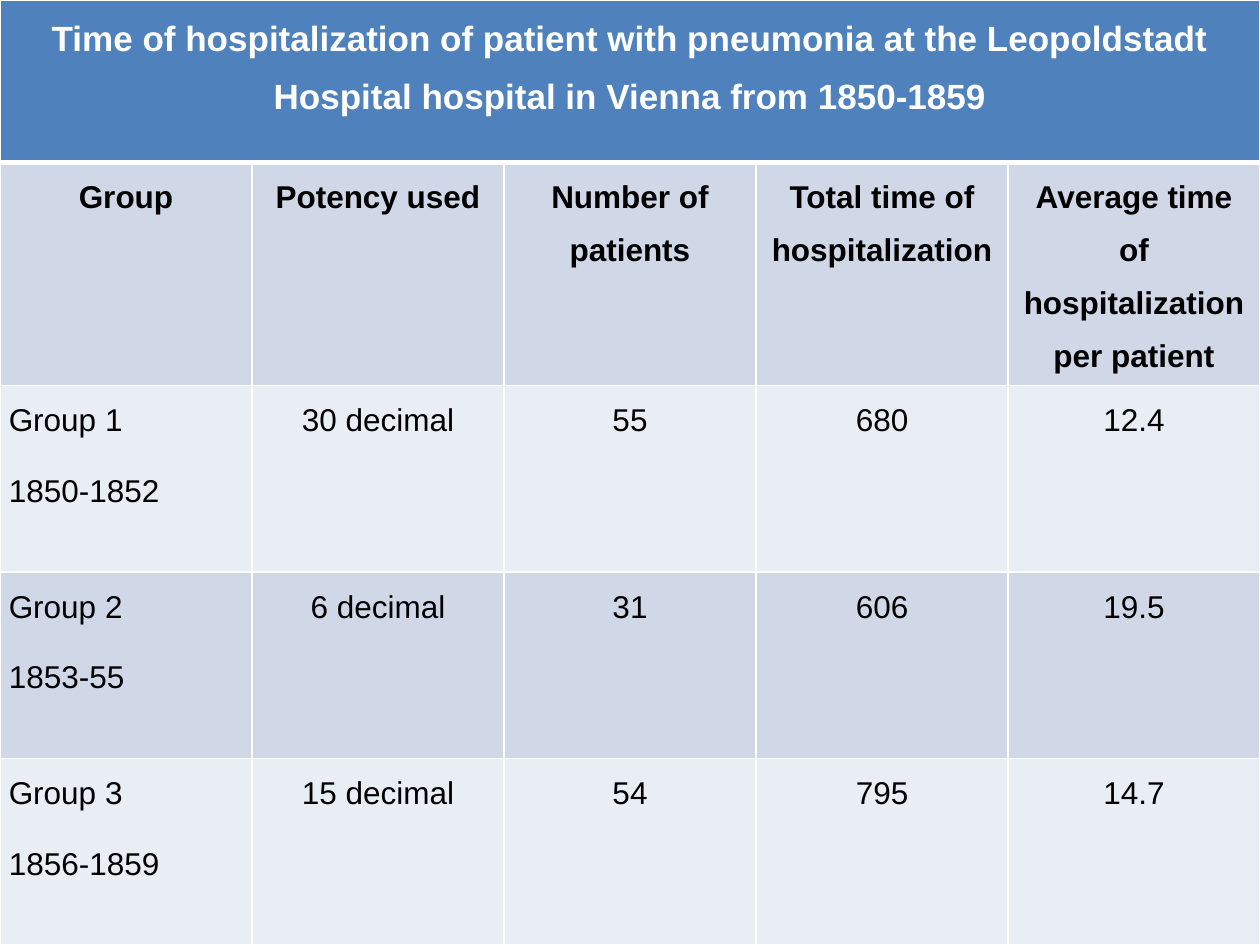
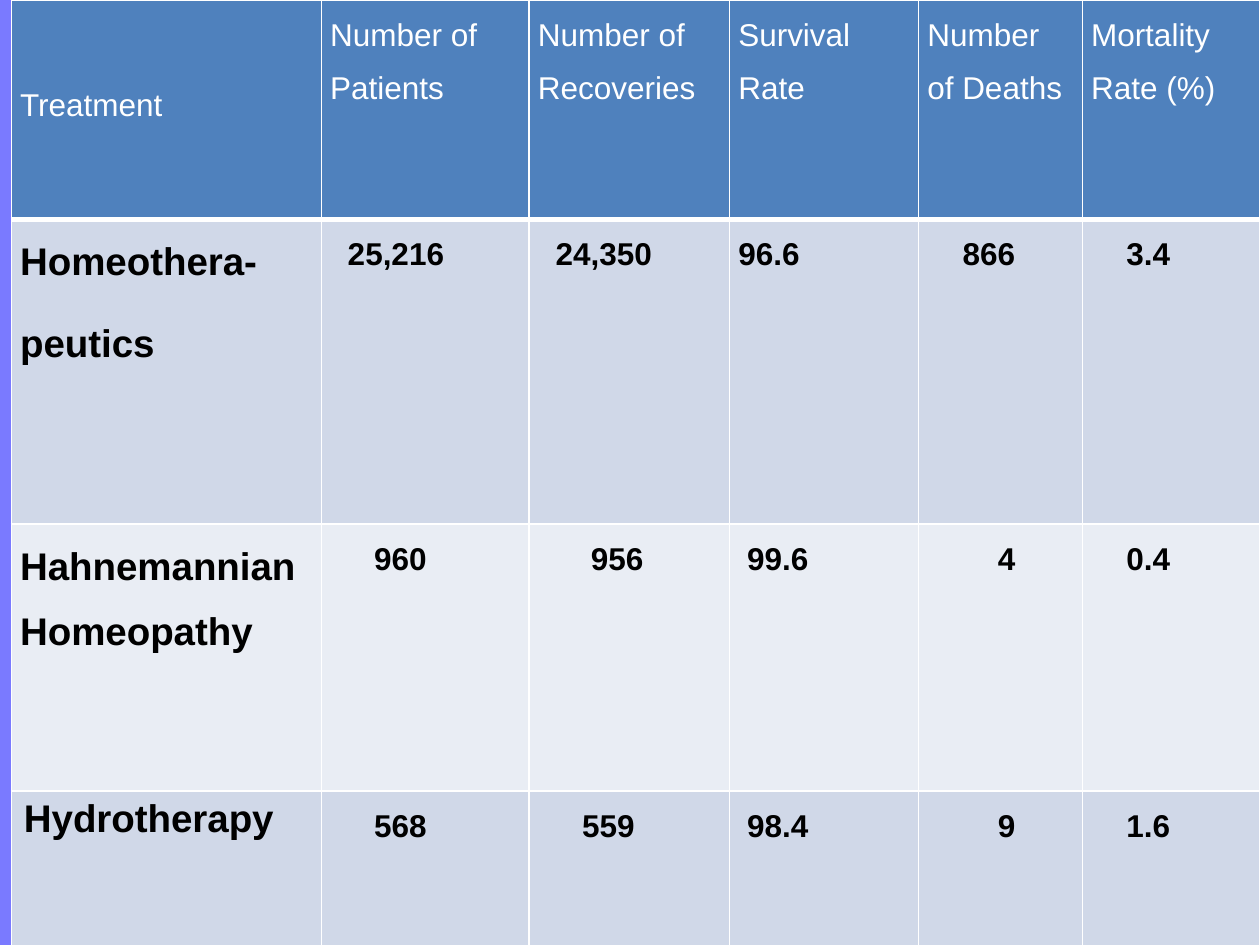
from dataclasses import dataclass, replace

from lxml.etree import SubElement
from pptx import Presentation
from pptx.dml.color import RGBColor as Color
from pptx.enum.text import PP_ALIGN as Align
from pptx.oxml.ns import qn
from pptx.util import Inches, Pt


@dataclass(frozen=True)
class Theme:
    font: str = "Arial"
    backdrop: str = "7A7AFF"
    header: str = "4F81BD"
    bands: tuple[str, str] = ("D0D8E8", "E9EDF4")
    light: str = "FFFFFF"
    dark: str = "000000"
    body_size: int = 18
    title_size: int = 20
    treatment_size: int = 22
    thin: int = 1
    thick: int = 3
    inset: float = 0.07


THEME = Theme()


@dataclass(frozen=True)
class Entry:
    """One table cell; each line of text is a paragraph."""
    text: str
    indent: float = 0
    drop: float = 0
    size: int = THEME.body_size
    color: str = THEME.dark
    bold: bool = False
    align: Align = Align.LEFT
    spacing: float = 1.5
    after: int = 10


@dataclass(frozen=True)
class Grid:
    left: float
    columns: list[float]
    heights: list[float]
    rows: list[list[Entry]]


def write_text(frame, text: str, *, size: int, color: str, bold: bool,
               align: Align, spacing: float, after: int) -> None:
    for number, line in enumerate(text.split("\n")):
        para = frame.add_paragraph() if number else frame.paragraphs[0]
        para.alignment, para.line_spacing = align, spacing
        para.space_before, para.space_after = Pt(0), Pt(after)
        span = para.add_run()
        span.text = line
        span.font.name, span.font.size = THEME.font, Pt(size)
        span.font.bold = bold
        span.font.color.rgb = Color.from_string(color)


def draw_borders(cell, top: int, bottom: int) -> None:
    properties = cell._tc.get_or_add_tcPr()
    sides = {"L": THEME.thin, "R": THEME.thin, "T": top, "B": bottom}
    for position, (side, width) in enumerate(sides.items()):
        line = SubElement(properties, qn(f"a:ln{side}"), w=str(Pt(width)))
        fill = SubElement(line, qn("a:solidFill"))
        SubElement(fill, qn("a:srgbClr"), val=THEME.light)
        properties.insert(position, line)  # borders come before the fill


def style_cell(cell, row: int) -> None:
    cell.fill.solid()
    band = THEME.bands[(row - 1) % 2] if row else THEME.header
    cell.fill.fore_color.rgb = Color.from_string(band)
    draw_borders(cell, top=THEME.thick if row == 1 else THEME.thin,
                 bottom=THEME.thin if row else THEME.thick)


def fill_cell(cell, entry: Entry) -> None:
    cell.margin_left = Inches(THEME.inset + entry.indent)
    cell.margin_right = Inches(THEME.inset)
    cell.margin_top, cell.margin_bottom = Inches(entry.drop), Inches(0)
    write_text(cell.text_frame, entry.text, size=entry.size, color=entry.color,
               bold=entry.bold, align=entry.align, spacing=entry.spacing,
               after=entry.after)


def add_table_page(deck, grid: Grid) -> None:
    page = deck.slides.add_slide(deck.slide_layouts[6])
    page.background.fill.solid()
    page.background.fill.fore_color.rgb = Color.from_string(THEME.backdrop)
    table = page.shapes.add_table(
        len(grid.heights), len(grid.columns), Inches(grid.left), Inches(0),
        Inches(sum(grid.columns)), Inches(sum(grid.heights))).table
    table.first_row = table.horz_banding = False
    for column, width in zip(table.columns, grid.columns):
        column.width = Inches(width)
    for number, (row, height) in enumerate(zip(table.rows, grid.heights)):
        row.height = Inches(height)
        for cell in row.cells:
            style_cell(cell, number)
        entries = grid.rows[number]
        if len(entries) == 1:  # a lone entry spans the whole row
            row.cells[0].merge(row.cells[len(grid.columns) - 1])
        for cell, entry in zip(row.cells, entries):
            fill_cell(cell, entry)


def hospitalization_grid() -> Grid:
    title = Entry("Time of hospitalization of patient with pneumonia at the "
                  "Leopoldstadt Hospital hospital in Vienna from 1850-1859",
                  size=THEME.title_size, color=THEME.light, bold=True,
                  align=Align.CENTER)
    headings = ["Group", "Potency used", "Number of patients",
                "Total time of hospitalization",
                "Average time of hospitalization per patient"]
    groups = [
        ("Group 1\n1850-1852", "30 decimal", "55", "680", "12.4"),
        ("Group 2\n1853-55", "6 decimal", "31", "606", "19.5"),
        ("Group 3\n1856-1859", "15 decimal", "54", "795", "14.7"),
    ]
    rows = [[title], [Entry(text, bold=True, align=Align.CENTER) for text in headings]]
    for name, *values in groups:
        rows.append([Entry(name)] + [Entry(value, align=Align.CENTER) for value in values])
    return Grid(0, [2] * 5, [1.29, 1.77] + [1.48] * 3, rows)


def treatment_grid() -> Grid:
    headings = ["Treatment", "Number of Patients", "Number of Recoveries",
                "Survival Rate", "Number of Deaths", "Mortality Rate (%)"]
    header = [Entry(text, color=THEME.light) for text in headings]
    header[0] = replace(header[0], drop=0.56)
    name = Entry("", size=THEME.treatment_size, bold=True)
    # Each value is paired with its indent in steps
    step = 0.07
    treatments = [
        (replace(name, text="Homeothera-\npeutics"),
         [("25,216", 2), ("24,350", 2), ("96.6", 0), ("866", 4), ("3.4", 4)]),
        (replace(name, text="Hahnemannian\nHomeopathy", after=0),
         [("960", 5), ("956", 6), ("99.6", 1), ("4", 8), ("0.4", 4)]),
        (replace(name, text="Hydrotherapy", indent=0.03, drop=0.05, spacing=1.0, after=0),
         [("568", 5), ("559", 5), ("98.4", 1), ("9", 8), ("1.6", 4)]),
    ]
    rows = [header]
    for treatment, values in treatments:
        rows.append([treatment] + [Entry(value, indent=step * steps, bold=True)
                                   for value, steps in values])
    return Grid(0.09, [2.46, 1.65, 1.59, 1.5, 1.3, 1.41], [1.74, 2.42, 2.12, 1.23], rows)


def main() -> None:
    deck = Presentation()
    deck.slide_width, deck.slide_height = Inches(10), Inches(7.5)
    for grid in (hospitalization_grid(), treatment_grid()):
        add_table_page(deck, grid)
    deck.save("out.pptx")


if __name__ == "__main__":
    main()
